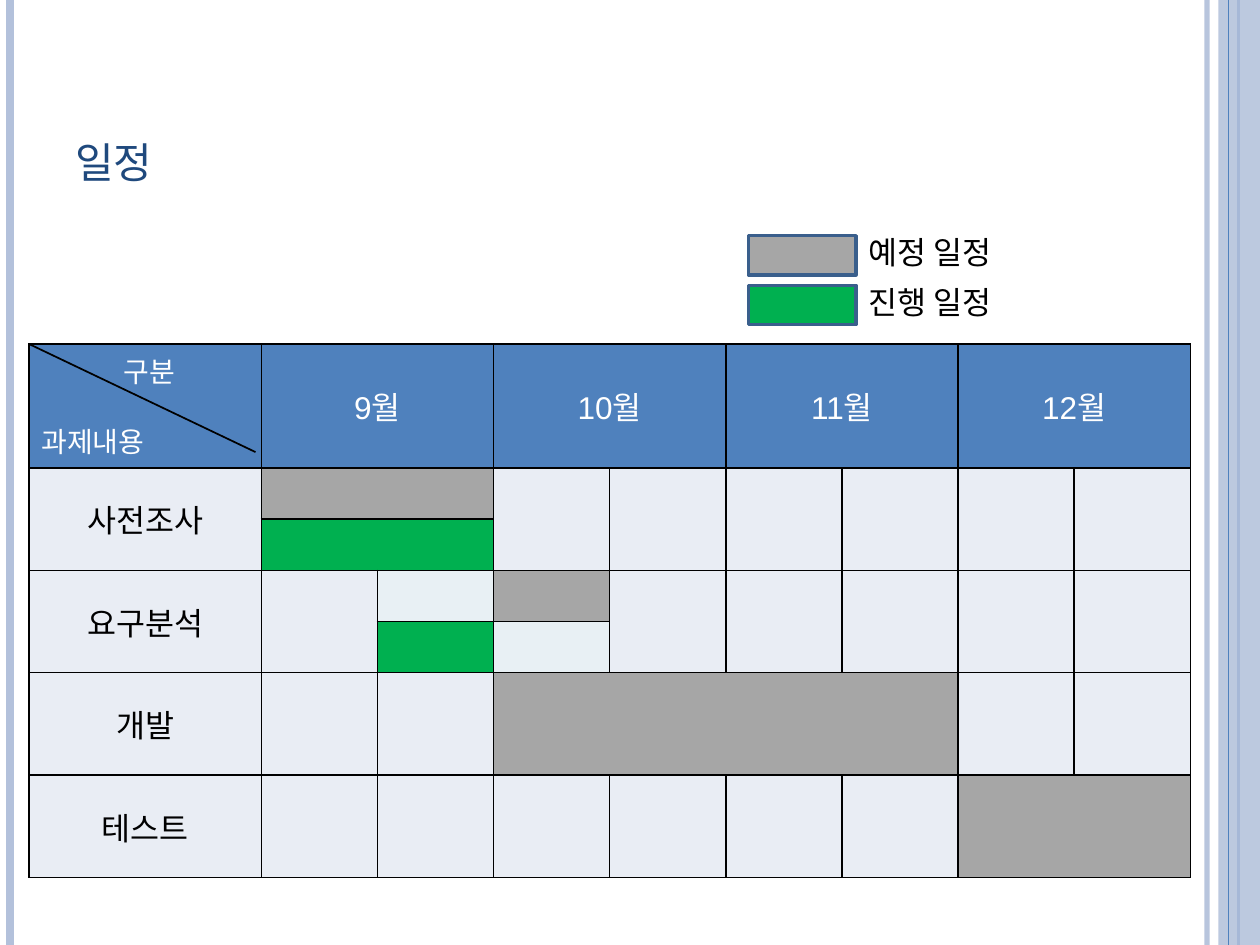
import pptx
import pptx.util
import pptx.dml.color
import pptx.enum.shapes
import pptx.enum.text
import pptx.oxml
import pptx.oxml.ns
import lxml.etree

W, H = 10, 7.5
FONT = "Arial"
C = {
    "band": "B3C1DB", "accent": "4F81BD", "title": "1F497D", "edge": "3A5F8C",
    "planned": "A6A6A6", "actual": "00B050", "cell": "E9EDF4", "pale": "E8F0F4",
    "white": "FFFFFF", "black": "000000",
}
MONTHS = ["9월", "10월", "11월", "12월"]
TASKS = [("사전조사", 1, 2), ("요구분석", 3, 2), ("개발", 5, 1), ("테스트", 6, 1)]
ROW_UNITS = [2.42, 1, 1, 1, 1, 2, 2]
COL_UNITS = [2] + [1] * 8
BARS = [
    (1, 1, 2, "planned"), (2, 1, 2, "actual"),
    (3, 2, 1, "pale"), (3, 3, 1, "planned"),
    (4, 2, 1, "actual"), (4, 3, 1, "pale"),
    (5, 3, 4, "planned"), (6, 7, 2, "planned"),
]


def rgb(name):
    return pptx.dml.color.RGBColor.from_string(C[name])


def inches(*values):
    return [pptx.util.Inches(v) for v in values]


def set_alpha(sp, percent):
    for clr in sp._element.spPr.iter(pptx.oxml.ns.qn("a:srgbClr")):
        alpha = lxml.etree.SubElement(clr, pptx.oxml.ns.qn("a:alpha"))
        alpha.set("val", str(percent * 1000))


def add_line(slide, x1, y1, x2, y2, color, width):
    cx = slide.shapes.add_connector(
        pptx.enum.shapes.MSO_CONNECTOR.STRAIGHT, *inches(x1, y1, x2, y2))
    cx.line.color.rgb = rgb(color)
    cx.line.width = pptx.util.Pt(width)
    lxml.etree.SubElement(cx._element.spPr, pptx.oxml.ns.qn("a:effectLst"))
    return cx


def add_rect(slide, box, fill, line=None):
    sp = slide.shapes.add_shape(pptx.enum.shapes.MSO_SHAPE.RECTANGLE, *inches(*box))
    sp.shadow.inherit = False
    sp.fill.solid()
    sp.fill.fore_color.rgb = rgb(fill)
    if line:
        sp.line.color.rgb = rgb(line)
        sp.line.width = pptx.util.Pt(2)
    else:
        sp.line.fill.background()
    return sp


def style(p, size, color):
    p.font.size = pptx.util.Pt(size)
    p.font.name = FONT
    p.font.color.rgb = rgb(color)


def add_text(slide, box, text, size, color):
    tf = slide.shapes.add_textbox(*inches(*box)).text_frame
    tf.word_wrap = True
    p = tf.paragraphs[0]
    r = p.add_run()
    r.text = text
    style(p, size, color)
    return tf


def draw_frame(slide, x, y, w, h):
    def rule(share, color, width):
        return add_line(slide, x + w * share, y, x + w * share, y + h, color, width)

    set_alpha(rule(0.958, "band", 3), 93)
    rule(0.008, "band", 4.5)
    rule(0.983, "accent", 1.5)
    set_alpha(add_rect(slide, (x + w * 0.967, y, w * 0.033, h), "band"), 87)
    rule(0.975, "accent", 0.75)


def draw_title(slide, x, y, w, h):
    tf = add_text(slide, (x, y, w, h), "일정", 30, "title")
    tf.vertical_anchor = pptx.enum.text.MSO_ANCHOR.BOTTOM
    tf.paragraphs[0].runs[0].font._element.set("cap", "small")


def draw_legend(slide, x, y, w, h):
    row = h / 2
    entries = [("planned", "예정 일정"), ("actual", "진행 일정")]
    for i, (color, label) in enumerate(entries):
        top = y + i * row
        add_rect(slide, (x, top + row * 0.18, w * 0.39, row * 0.79), color, "edge")
        add_text(slide, (x + w * 0.39, top, w * 0.61, row), label, 18, "black")


def format_cell(cell, fill):
    tcPr = cell._tc.get_or_add_tcPr()
    for side in ("L", "R", "T", "B"):
        tcPr.append(pptx.oxml.parse_xml(
            f'<a:ln{side} {pptx.oxml.ns.nsdecls("a")} w="12700"><a:solidFill>'
            f'<a:srgbClr val="{C["black"]}"/></a:solidFill></a:ln{side}>'))
    cell.fill.solid()
    cell.fill.fore_color.rgb = rgb(fill)


def label_cell(cell, text, color):
    cell.text = text
    cell.vertical_anchor = pptx.enum.text.MSO_ANCHOR.MIDDLE
    p = cell.text_frame.paragraphs[0]
    p.alignment = pptx.enum.text.PP_ALIGN.CENTER
    style(p, 18, color)


def label_corner(cell):
    cell.text = "구분\n과제내용"
    top, bottom = cell.text_frame.paragraphs
    for p in (top, bottom):
        style(p, 16, "white")
    top._p.get_or_add_pPr().set("marL", str(pptx.util.Inches(0.65)))
    bottom.space_before = pptx.util.Pt(17)


def draw_schedule(slide, x, y, w, h):
    col, row = w / sum(COL_UNITS), h / sum(ROW_UNITS)
    table = slide.shapes.add_table(
        len(ROW_UNITS), len(COL_UNITS), *inches(x, y, w, h)).table
    for c, units in enumerate(COL_UNITS):
        table.columns[c].width = pptx.util.Inches(col * units)
    for r, units in enumerate(ROW_UNITS):
        table.rows[r].height = pptx.util.Inches(row * units)

    fills = {(r, c + i): color for r, c, span, color in BARS for i in range(span)}
    for r in range(len(ROW_UNITS)):
        for c in range(len(COL_UNITS)):
            fill = "accent" if r == 0 else fills.get((r, c), "cell")
            format_cell(table.cell(r, c), fill)

    label_corner(table.cell(0, 0))
    for i, month in enumerate(MONTHS):
        c = 1 + 2 * i
        table.cell(0, c).merge(table.cell(0, c + 1))
        label_cell(table.cell(0, c), month, "white")
    for task, r, span in TASKS:
        label_cell(table.cell(r, 0), task, "black")
        for c in range(len(COL_UNITS)):
            if span > 1 and (r, c) not in fills:
                table.cell(r, c).merge(table.cell(r + span - 1, c))
    for r, c, span, color in BARS:
        if span > 1:
            table.cell(r, c).merge(table.cell(r, c + span - 1))

    add_line(slide, x, y, x + col * 1.95, y + row * 2.11, "black", 1)


def main():
    prs = pptx.Presentation()
    prs.slide_width, prs.slide_height = inches(W, H)
    slide = prs.slides.add_slide(prs.slide_layouts[6])
    draw_frame(slide, 0, 0, W, H)
    draw_title(slide, W * 0.05, H * 0.04, W * 0.817, H * 0.167)
    draw_schedule(slide, W * 0.023, H * 0.364, W * 0.922, H * 0.565)
    draw_legend(slide, W * 0.594, H * 0.24, W * 0.219, H * 0.105)
    prs.save("out.pptx")


if __name__ == "__main__":
    main()
